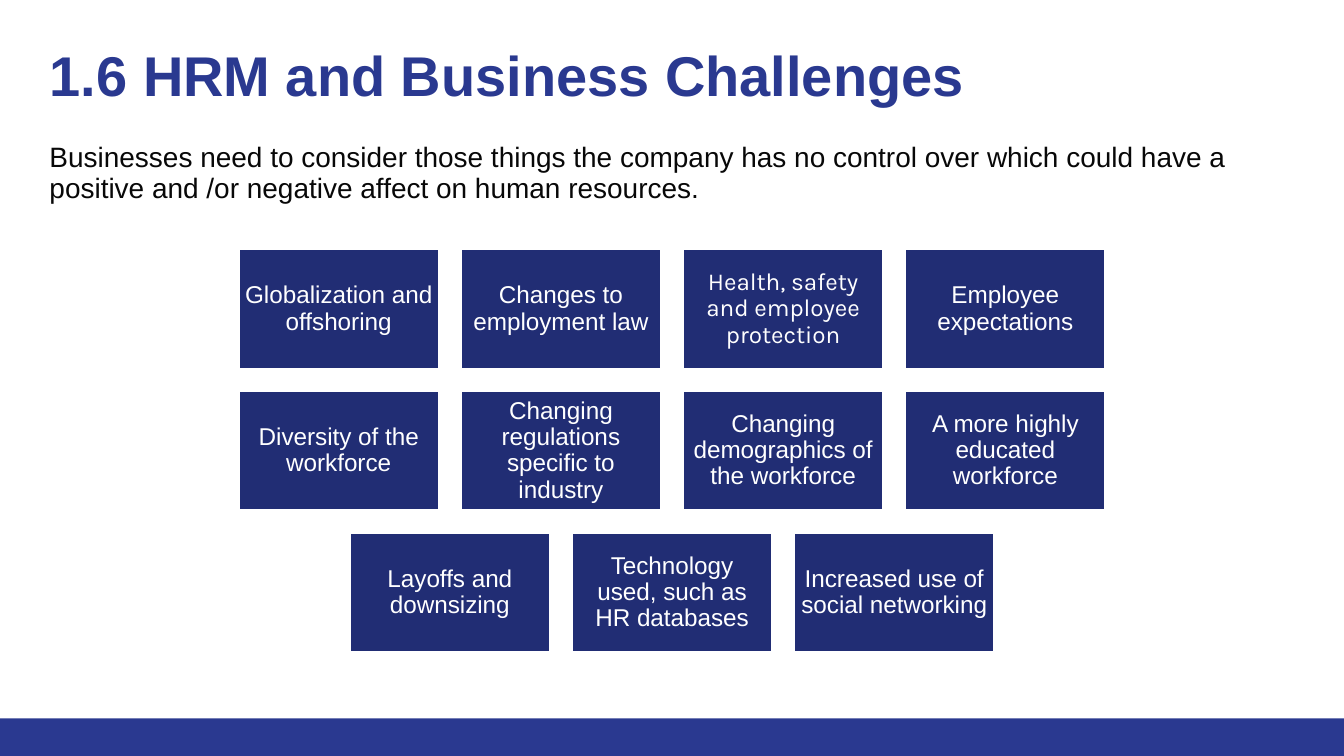
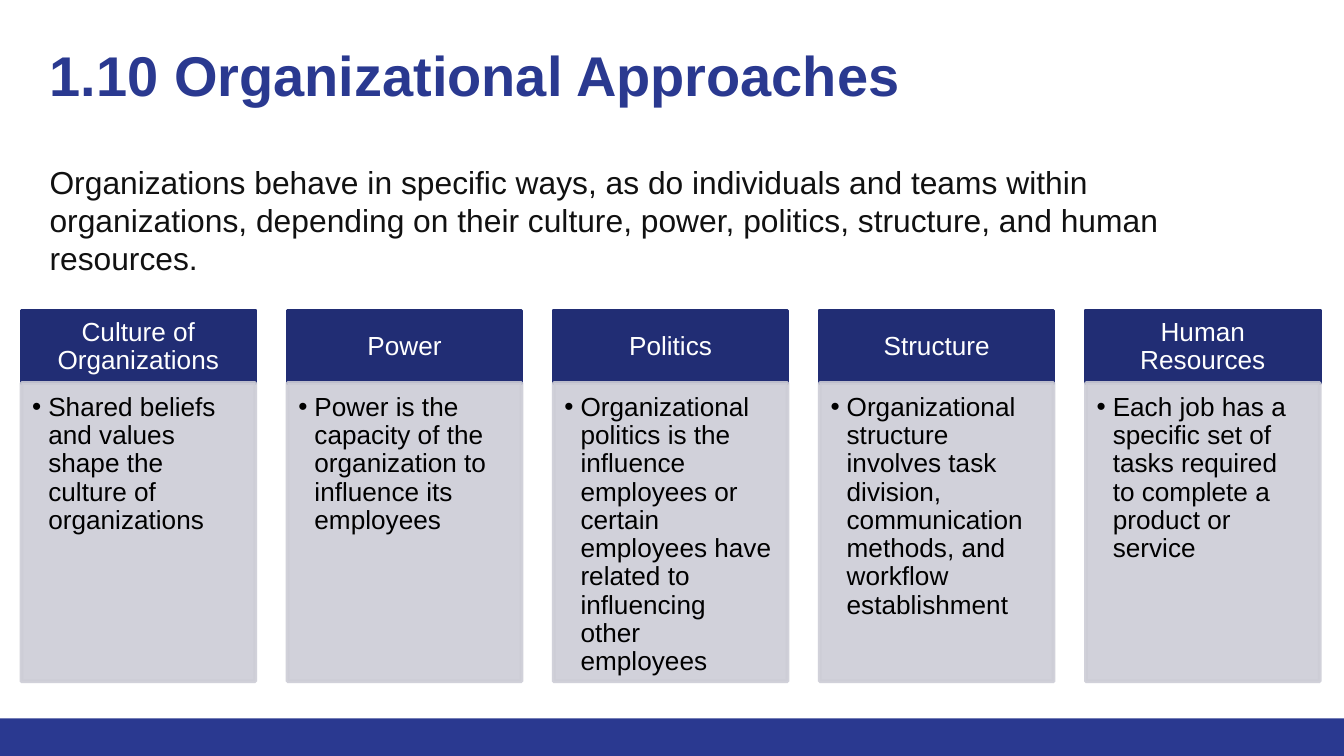
from dataclasses import dataclass

from lxml.etree import SubElement
from pptx import Presentation
from pptx.dml.color import RGBColor
from pptx.enum.shapes import MSO_SHAPE
from pptx.enum.text import MSO_ANCHOR, MSO_AUTO_SIZE, PP_ALIGN
from pptx.oxml.ns import qn
from pptx.util import Inches, Pt


@dataclass(frozen=True)
class Theme:
    band: str = "2A3990"
    navy: str = "212D74"
    pale: str = "CDCDD6"
    white: str = "FFFFFF"
    black: str = "000000"
    lead: str = "080808"
    summary: str = "111111"
    font: str = "Arial"
    accent_font: str = "Karla"
    title_size: int = 30
    lead_size: int = 15
    summary_size: int = 17
    card_size: int = 13
    column_size: int = 14
    border: int = 2
    tight: float = 0.9
    opacity: int = 90


@dataclass(frozen=True)
class Box:
    left: float
    top: float
    width: float
    height: float

    def inches(self):
        return [Inches(v) for v in (self.left, self.top, self.width, self.height)]


THEME = Theme()
PAGE = Box(0, 0, 10, 10 * 9 / 16)
TITLE = Box(0.27, 0.2, 9.2, 0.89)
BAND_HEIGHT = 0.28

CHALLENGES = [
    ["Globalization and offshoring", "Changes to employment law",
     "Health, safety and employee protection", "Employee expectations"],
    ["Diversity of the workforce", "Changing regulations specific to industry",
     "Changing demographics of the workforce", "A more highly educated workforce"],
    ["Layoffs and downsizing", "Technology used, such as HR databases",
     "Increased use of social networking "],
]
ACCENTED = "Health, safety and employee protection"

APPROACHES = [
    ("Culture of Organizations",
     "Shared beliefs and values shape the culture of organizations"),
    ("Power",
     "Power is the capacity of the organization to influence its employees"),
    ("Politics",
     "Organizational politics is the influence employees or certain employees "
     "have related to influencing other employees"),
    ("Structure",
     "Organizational structure involves task division, communication methods, "
     "and workflow establishment"),
    ("Human Resources",
     "Each job has a specific set of tasks required to complete a product or service"),
]


def write(frame, text, size, color, font=THEME.font, bold=False, spacing=None,
          align=PP_ALIGN.LEFT, anchor=MSO_ANCHOR.TOP, insets=(0.1, 0.1, 0.1, 0.1)):
    frame.word_wrap = True
    frame.auto_size = MSO_AUTO_SIZE.NONE
    frame.vertical_anchor = anchor
    (frame.margin_left, frame.margin_top,
     frame.margin_right, frame.margin_bottom) = map(Inches, insets)
    paragraph = frame.paragraphs[0]
    paragraph.alignment = align
    if spacing:
        paragraph.line_spacing = spacing
    run = paragraph.add_run()
    run.text = text
    run.font.size = Pt(size)
    run.font.name = font
    run.font.bold = bold
    run.font.color.rgb = RGBColor.from_string(color)
    return paragraph


def add_panel(slide, box, fill, border=None):
    panel = slide.shapes.add_shape(MSO_SHAPE.RECTANGLE, *box.inches())
    panel.shadow.inherit = False
    panel.fill.solid()
    panel.fill.fore_color.rgb = RGBColor.from_string(fill)
    if border:
        panel.line.color.rgb = RGBColor.from_string(border)
        panel.line.width = Pt(THEME.border)
    else:
        panel.line.fill.background()
    return panel


def make_translucent(panel, percent):
    for color in panel.element.spPr.iter(qn("a:srgbClr")):
        SubElement(color, qn("a:alpha"), val=str(percent * 1000))


def add_bullet(paragraph, color, indent):
    properties = paragraph._p.get_or_add_pPr()
    properties.set("marL", str(Inches(indent)))
    properties.set("indent", str(-Inches(indent)))
    bullet_color = SubElement(properties, qn("a:buClr"))
    SubElement(bullet_color, qn("a:srgbClr"), val=color)
    SubElement(properties, qn("a:buFont"), typeface=THEME.font)
    SubElement(properties, qn("a:buChar"), char="•")


def add_master_band(deck):
    band = add_panel(deck.slides[0],
                     Box(0, PAGE.height - BAND_HEIGHT, PAGE.width, BAND_HEIGHT), THEME.band)
    master_shapes = deck.slide_master.shapes
    next_id = max(shape.shape_id for shape in master_shapes) + 1
    band.element.nvSpPr.cNvPr.set("id", str(next_id))
    master_shapes.element.insert(2, band.element)


def add_titled_slide(deck, heading):
    slide = deck.slides.add_slide(deck.slide_layouts[5])
    title = slide.shapes.title
    title.left, title.top, title.width, title.height = TITLE.inches()
    write(title.text_frame, heading, THEME.title_size, THEME.band, bold=True)
    return slide


def add_intro(slide, box, text, size, color, **style):
    intro = slide.shapes.add_textbox(*box.inches())
    write(intro.text_frame, text, size, color, **style)


def add_challenge_grid(slide, box, rows, card_width=1.5, card_height=0.9):
    most = max(map(len, rows))
    step_x = card_width + (box.width - most * card_width) / (most - 1)
    step_y = card_height + (box.height - len(rows) * card_height) / (len(rows) - 1)
    for row, challenges in enumerate(rows):
        left = box.left + (most - len(challenges)) * step_x / 2
        for column, challenge in enumerate(challenges):
            place = Box(left + column * step_x, box.top + row * step_y,
                        card_width, card_height)
            card = add_panel(slide, place, THEME.navy, THEME.white)
            font = THEME.accent_font if challenge == ACCENTED else THEME.font
            write(card.text_frame, challenge, THEME.card_size, THEME.white, font=font,
                  spacing=THEME.tight, align=PP_ALIGN.CENTER, anchor=MSO_ANCHOR.MIDDLE,
                  insets=(0.05, 0.05, 0.05, 0.05))


def add_approach(slide, box, name, detail, header_height=0.54):
    header = add_panel(slide, Box(box.left, box.top, box.width, header_height),
                       THEME.navy, THEME.navy)
    write(header.text_frame, name, THEME.column_size, THEME.white, spacing=THEME.tight,
          align=PP_ALIGN.CENTER, anchor=MSO_ANCHOR.MIDDLE, insets=(0.11, 0.06, 0.11, 0.06))
    body = add_panel(slide, Box(box.left, box.top + header_height, box.width,
                                box.height - header_height), THEME.pale, THEME.pale)
    make_translucent(body, THEME.opacity)
    point = write(body.text_frame, detail, THEME.column_size, THEME.black,
                  spacing=THEME.tight, insets=(0.08, 0.08, 0.11, 0.12))
    point.level = 1
    add_bullet(point, THEME.black, 0.12)


def add_approach_columns(slide, box, approaches, column_width=1.74):
    step = (box.width - column_width) / (len(approaches) - 1)
    for index, (name, detail) in enumerate(approaches):
        place = Box(box.left + index * step, box.top, column_width, box.height)
        add_approach(slide, place, name, detail)


def build_challenges(deck):
    slide = add_titled_slide(deck, "1.6 HRM and Business Challenges")
    add_intro(slide, Box(0.27, 0.97, 9.2, 0.51),
              "Businesses need to consider those things the company has no control over "
              "which could have a positive and /or negative affect on human resources.",
              THEME.lead_size, THEME.lead, spacing=THEME.tight)
    add_challenge_grid(slide, Box(1.77, 1.85, 6.46, 3.01), CHALLENGES)


def build_approaches(deck):
    slide = add_titled_slide(deck, "1.10 Organizational Approaches")
    add_intro(slide, Box(0.27, 1.16, 9.41, 0.96),
              "Organizations behave in specific ways, as do individuals and teams within "
              "organizations, depending on their culture, power, politics, structure, "
              "and human resources.",
              THEME.summary_size, THEME.summary, insets=(0.1, 0.05, 0.1, 0.05))
    add_approach_columns(slide, Box(0.16, 2.31, 9.66, 2.76), APPROACHES)


def main():
    deck = Presentation()
    deck.slide_width, deck.slide_height = Inches(PAGE.width), Inches(PAGE.height)
    build_challenges(deck)
    build_approaches(deck)
    add_master_band(deck)
    deck.save("out.pptx")


if __name__ == "__main__":
    main()
